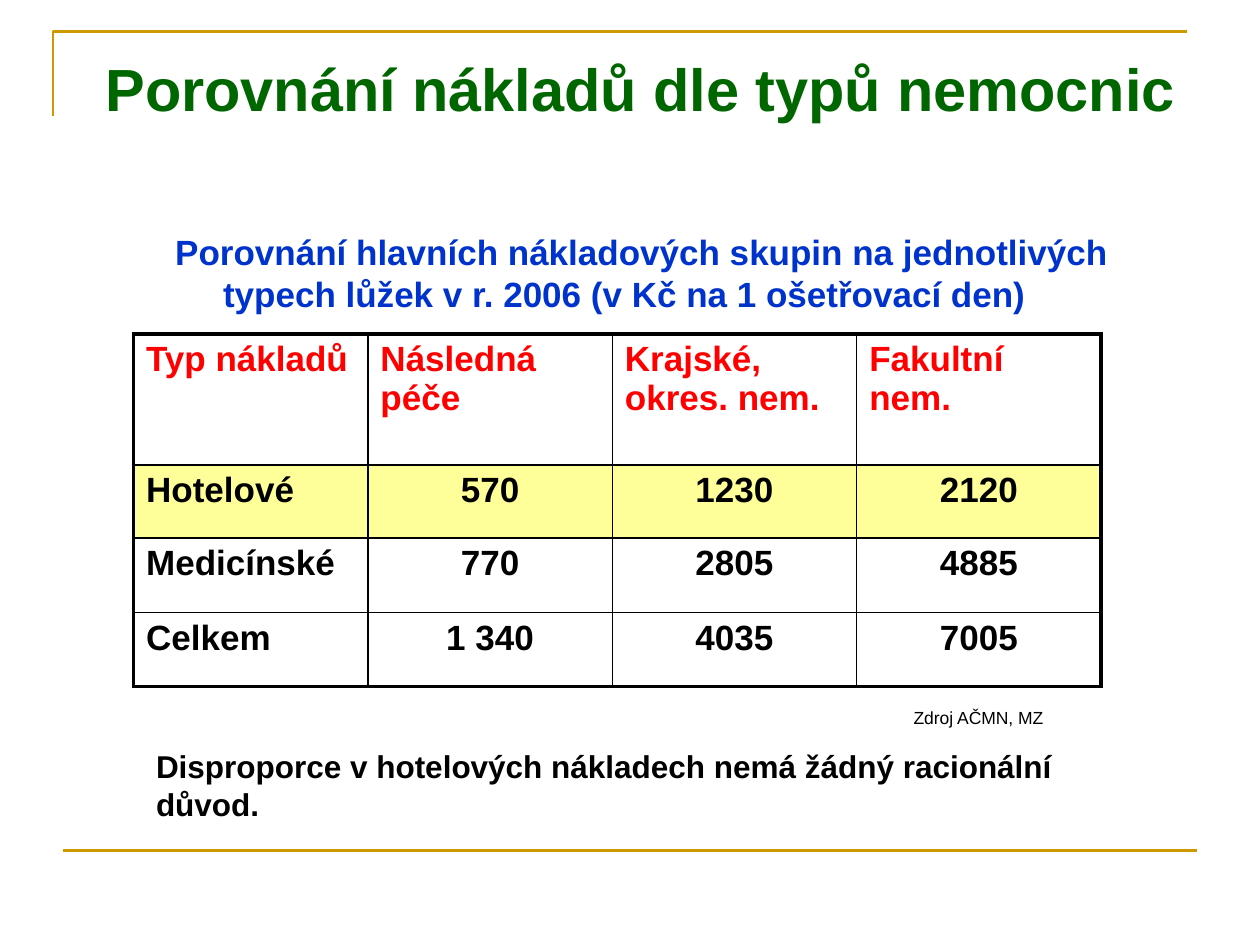
import pptx
import pptx.util
import pptx.dml.color
import pptx.enum.shapes
import pptx.enum.text
import pptx.oxml.xmlchemy
from pptx.oxml.ns import qn
from pptx.util import Inches, Pt

TITLE = "Porovnání nákladů dle typů nemocnic"
SUBTITLE = ("Porovnání hlavních nákladových skupin na jednotlivých typech lůžek "
            "v r. 2006 (v Kč na 1 ošetřovací den)")
COSTS = [
    ("Typ nákladů", "Následná péče", "Krajské, okres. nem.", "Fakultní nem."),
    ("Hotelové", "570", "1230", "2120"),
    ("Medicínské", "770", "2805", "4885"),
    ("Celkem", "1 340", "4035", "7005"),
]
SOURCE = "Zdroj AČMN, MZ"
CONCLUSION = "Disproporce v hotelových nákladech nemá žádný racionální důvod."

COLUMN_WIDTHS = (1.86, 1.94, 1.94, 1.94)
ROW_HEIGHTS = (1.04, 0.58, 0.59, 0.59)
HIGHLIGHTED_ROW = 1

THEME = {
    "rule": "CC9900", "border": "000000", "highlight": "FFFF99",
    "rule_width": 1.5, "outer": 2.25, "inner": 1,
    "title": {"size": 34, "color": "006600", "bold": True},
    "subtitle": {"size": 20, "color": "0033CC", "bold": True},
    "header": {"size": 20, "color": "FF0000", "bold": True},
    "cell": {"size": 20, "color": "000000", "bold": True},
    "source": {"size": 10, "color": "000000", "bold": False},
    "conclusion": {"size": 18, "color": "000000", "bold": True},
}
ALIGN = pptx.enum.text.PP_ALIGN
TOP = pptx.enum.text.MSO_ANCHOR.TOP
new_element = pptx.oxml.xmlchemy.OxmlElement


def rgb(value):
    return pptx.dml.color.RGBColor.from_string(value)


def write(frame, text, style, align=ALIGN.LEFT):
    frame.text = text
    frame.word_wrap = True
    paragraph = frame.paragraphs[0]
    paragraph.alignment = align
    look = THEME[style]
    font = paragraph.runs[0].font
    for name, value in {"name": "Arial", "size": Pt(look["size"]),
                        "bold": look["bold"]}.items():
        setattr(font, name, value)
    font.color.rgb = rgb(look["color"])
    return paragraph


def place(shape, *box):
    for name, value in zip(("left", "top", "width", "height"), box):
        setattr(shape, name, Inches(value))


def set_rule_line(shape):
    shape.line.color.rgb = rgb(THEME["rule"])
    shape.line.width = Pt(THEME["rule_width"])


def add_rules(slide):
    builder = slide.shapes.build_freeform(Inches(0.42), Inches(0.92))
    builder.add_line_segments([(Inches(0.42), Inches(0.25)),
                               (Inches(9.42), Inches(0.25))], close=False)
    corner = builder.convert_to_shape()
    corner.fill.background()
    corner.shadow.inherit = False
    set_rule_line(corner)

    bottom = slide.shapes.add_connector(
        pptx.enum.shapes.MSO_CONNECTOR.STRAIGHT,
        Inches(0.5), Inches(6.75), Inches(9.5), Inches(6.75))
    set_rule_line(bottom)
    bottom.element.find(qn("p:spPr")).append(new_element("a:effectLst"))


def set_border(cell, side, width):
    """Draw one side, named L, R, T or B; borders must precede the fill."""
    line = new_element("a:ln" + side)
    line.set("w", str(Pt(width)))
    fill = new_element("a:solidFill")
    color = new_element("a:srgbClr")
    color.set("val", THEME["border"])
    fill.append(color)
    line.append(fill)
    cell._tc.get_or_add_tcPr().append(line)


def add_cost_table(slide):
    last_row, last_column = len(ROW_HEIGHTS) - 1, len(COLUMN_WIDTHS) - 1
    table = slide.shapes.add_table(
        last_row + 1, last_column + 1, Inches(1.06), Inches(2.65),
        Inches(sum(COLUMN_WIDTHS)), Inches(sum(ROW_HEIGHTS))).table
    for column, width in zip(table.columns, COLUMN_WIDTHS):
        column.width = Inches(width)
    for row, height in zip(table.rows, ROW_HEIGHTS):
        row.height = Inches(height)

    for r, costs in enumerate(COSTS):
        for c, text in enumerate(costs):
            cell = table.cell(r, c)
            is_number = r > 0 and c > 0
            paragraph = write(cell.text_frame, text, "cell" if r else "header",
                              ALIGN.CENTER if is_number else ALIGN.LEFT)
            paragraph.space_before = Pt(4)
            at_edge = {"L": c == 0, "R": c == last_column,
                       "T": r == 0, "B": r == last_row}
            for side, outer in at_edge.items():
                set_border(cell, side, THEME["outer" if outer else "inner"])
            if r == HIGHLIGHTED_ROW:
                cell.fill.solid()
                cell.fill.fore_color.rgb = rgb(THEME["highlight"])
            else:
                cell.fill.background()


def add_note(slide, text, style, *box):
    note = slide.shapes.add_textbox(*map(Inches, box))
    write(note.text_frame, text, style)
    return note


def main():
    deck = pptx.Presentation()
    deck.slide_width, deck.slide_height = Inches(10), Inches(7.5)
    slide = deck.slides.add_slide(deck.slide_layouts[1])
    add_rules(slide)

    title, subtitle = slide.placeholders
    place(title, 0.67, 0.36, 8.83, 0.94)
    write(title.text_frame, TITLE, "title", ALIGN.CENTER)
    place(subtitle, 1.29, 1.78, 7.96, 0.63)
    hanging = write(subtitle.text_frame, SUBTITLE, "subtitle")
    hanging.space_before = Pt(4)
    properties = hanging._p.get_or_add_pPr()
    properties.set("marL", str(Inches(0.38)))
    properties.set("indent", str(Inches(-0.38)))
    properties.append(new_element("a:buNone"))
    for placeholder in (title, subtitle):
        placeholder.text_frame.vertical_anchor = TOP
        placeholder.text_frame.auto_size = pptx.enum.text.MSO_AUTO_SIZE.NONE

    add_cost_table(slide)
    source = add_note(slide, SOURCE, "source", 6.5, 5.56, 2.25, 0.27)
    source.text_frame.margin_left = Inches(0.75)
    add_note(slide, CONCLUSION, "conclusion", 1.14, 5.88, 7.56, 0.7)
    deck.save("out.pptx")


if __name__ == "__main__":
    main()
